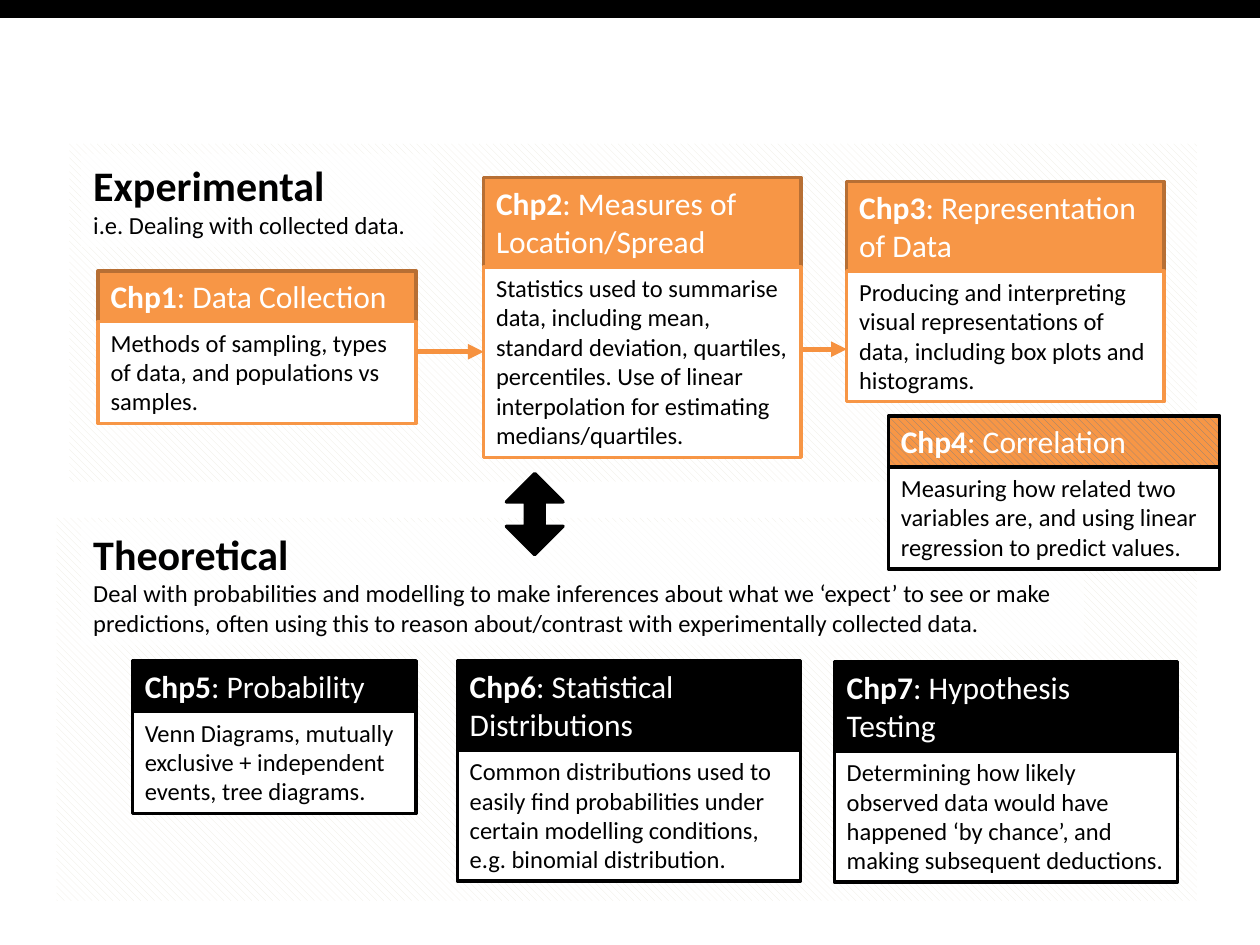
import pptx
import pptx.util
import pptx.dml.color
import pptx.enum.dml
import pptx.enum.shapes
import pptx.enum.text
import pptx.oxml
import pptx.oxml.ns
import lxml.etree

Cm = pptx.util.Cm
Pt = pptx.util.Pt
SHAPE = pptx.enum.shapes.MSO_SHAPE
ORANGE, BROWN, BLACK, WHITE = "F79646", "B76F34", "000000", "FFFFFF"

PANELS = [
    ((1.4, 2.9, 22.73, 6.81), (1.63, 3.1, 7.11, 1.88), "Experimental",
     "i.e. Dealing with collected data."),
    ((1.14, 10.44, 22.99, 7.72), (1.63, 10.52, 20.22, 2.49), "Theoretical",
     "Deal with probabilities and modelling to make inferences about what we "
     "‘expect’ to see or make predictions, often using this to reason "
     "about/contrast with experimentally collected data."),
]

CARDS = [
    ("Chp1", ": Data Collection", (1.98, 5.46, 6.41), 1.02, 2.06, ORANGE, BROWN, ORANGE,
     "Methods of sampling, types of data, and populations vs samples."),
    ("Chp2", ": Measures of Location/Spread", (9.75, 3.58, 6.4), 1.8, 3.84, ORANGE, BROWN, ORANGE,
     "Statistics used to summarise data, including mean, standard deviation, quartiles, "
     "percentiles. Use of linear interpolation for estimating medians/quartiles."),
    ("Chp3", ": Representation of Data", (17.07, 3.66, 6.4), 1.8, 2.64, ORANGE, BROWN, ORANGE,
     "Producing and interpreting visual representations of data, including box plots "
     "and histograms."),
    ("Chp5", ": Probability", (2.67, 13.32, 5.72), 1.02, 2.06, BLACK, BLACK, BLACK,
     "Venn Diagrams, mutually exclusive + independent events, tree diagrams."),
    ("Chp6", ": Statistical Distributions", (9.22, 13.32, 6.92), 1.8, 2.64, BLACK, BLACK, BLACK,
     "Common distributions used to easily find probabilities under certain modelling "
     "conditions, e.g. binomial distribution."),
    ("Chp7", ": Hypothesis Testing", (16.82, 13.34, 6.92), 1.8, 2.64, BLACK, BLACK, BLACK,
     "Determining how likely observed data would have happened ‘by chance’, and making "
     "subsequent deductions."),
    ("Chp4", ": Correlation", (17.91, 8.39, 6.68), 1.02, 2.06, ("808080", ORANGE), BLACK, BLACK,
     "Measuring how related two variables are, and using linear regression to predict values."),
]


def rgb(color):
    return pptx.dml.color.RGBColor.from_string(color)


def set_fill(sp, fill):
    if isinstance(fill, tuple):
        sp.fill.patterned()
        sp.fill.pattern = pptx.enum.dml.MSO_PATTERN.WIDE_DOWNWARD_DIAGONAL
        sp.fill.fore_color.rgb, sp.fill.back_color.rgb = map(rgb, fill)
    else:
        sp.fill.solid()
        sp.fill.fore_color.rgb = rgb(fill)


def add_box(s, box, fill, line=None, kind=SHAPE.RECTANGLE):
    sp = s.shapes.add_shape(kind, *map(Cm, box))
    sp.shadow.inherit = False
    set_fill(sp, fill)
    if line:
        sp.line.color.rgb = rgb(line)
        sp.line.width = Pt(2)
    else:
        sp.line.fill.background()
    return sp


def add_text(sp, paragraphs, color=BLACK):
    tf = sp.text_frame
    tf.word_wrap = True
    tf.vertical_anchor = pptx.enum.text.MSO_ANCHOR.TOP
    tf.auto_size = pptx.enum.text.MSO_AUTO_SIZE.SHAPE_TO_FIT_TEXT
    for i, runs in enumerate(paragraphs):
        p = tf.add_paragraph() if i else tf.paragraphs[0]
        p.alignment = pptx.enum.text.PP_ALIGN.LEFT
        for text, size, bold in runs:
            r = p.add_run()
            r.text = text
            r.font.name = "Calibri"
            r.font.size = Pt(size)
            r.font.bold = bold
            r.font.color.rgb = rgb(color)


def add_panel(s, area, label_box, title, note):
    add_box(s, area, ("EEECE1", WHITE))
    sp = add_box(s, label_box, WHITE)
    color = sp.fill._xPr.find(".//" + pptx.oxml.ns.qn("a:srgbClr"))
    lxml.etree.SubElement(color, pptx.oxml.ns.qn("a:alpha"), val="72000")
    add_text(sp, [[(title, 24, True)], [(note, 14, False)]])


def add_card(s, chapter, title, place, head_h, body_h, fill, head_line, body_line, note):
    x, y, w = place
    head = add_box(s, (x, y, w, head_h), fill, head_line)
    add_text(head, [[(chapter, 18, True), (title, 18, False)]], WHITE)
    body = add_box(s, (x, y + head_h, w, body_h), WHITE, body_line)
    add_text(body, [[(note, 14, False)]])


def add_arrow(s, x1, x2, y):
    c = s.shapes.add_connector(
        pptx.enum.shapes.MSO_CONNECTOR.STRAIGHT, Cm(x1), Cm(y), Cm(x2), Cm(y))
    c.line.color.rgb = rgb("F69240")
    c.line.width = Pt(3)
    qn = pptx.oxml.ns.qn
    lxml.etree.SubElement(c.line._get_or_add_ln(), qn("a:tailEnd"), type="triangle")
    lxml.etree.SubElement(c._element.spPr, qn("a:effectLst"))


def main():
    prs = pptx.Presentation()
    prs.slide_width, prs.slide_height = Cm(25.4), Cm(19.05)
    s = prs.slides.add_slide(prs.slide_layouts[6])
    for panel in PANELS:
        add_panel(s, *panel)
    link = add_box(s, (10.21, 9.55, 1.14, 1.63), BLACK, BLACK, SHAPE.UP_DOWN_ARROW)
    link.adjustments[0], link.adjustments[1] = 0.5, 0.33
    for card in CARDS:
        add_card(s, *card)
    add_arrow(s, 8.41, 9.75, 7.09)
    add_arrow(s, 16.18, 17.07, 7.04)
    add_box(s, (0, 0, 25.4, 0.33), BLACK, BLACK)
    prs.save("out.pptx")


if __name__ == "__main__":
    main()
